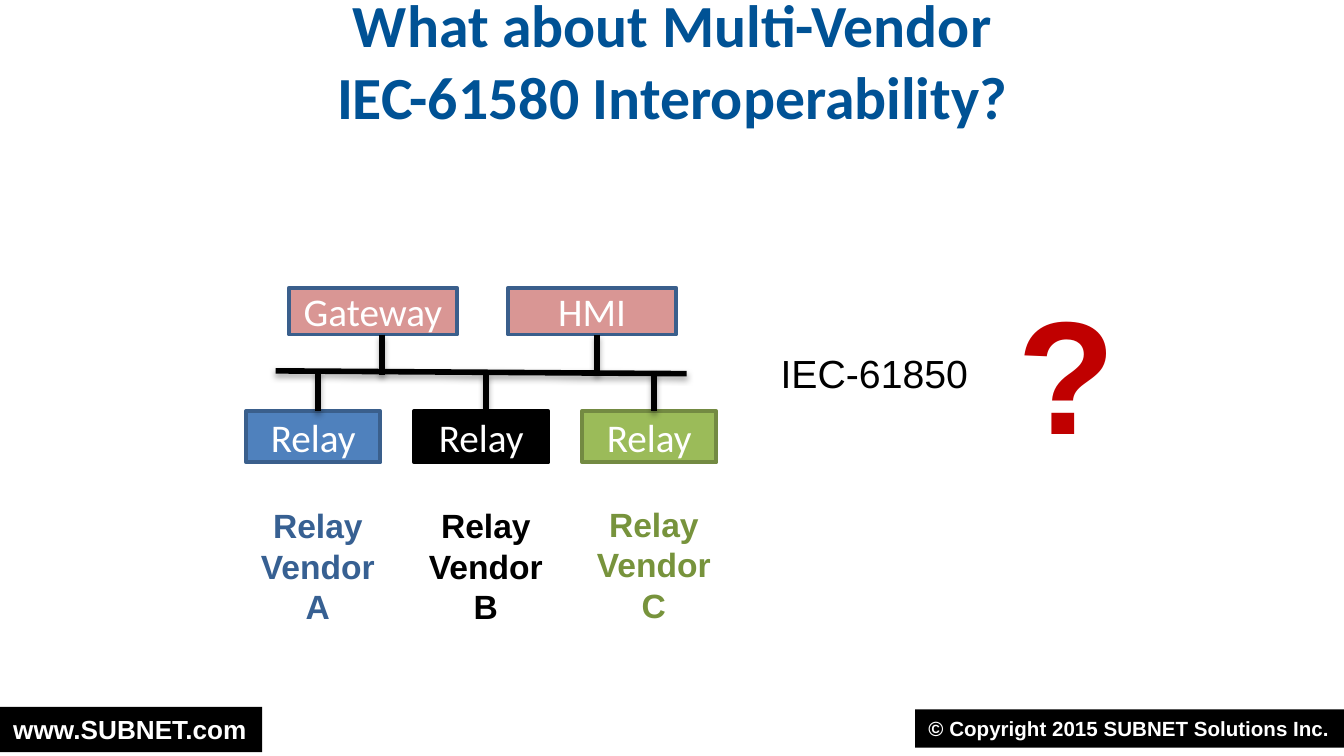
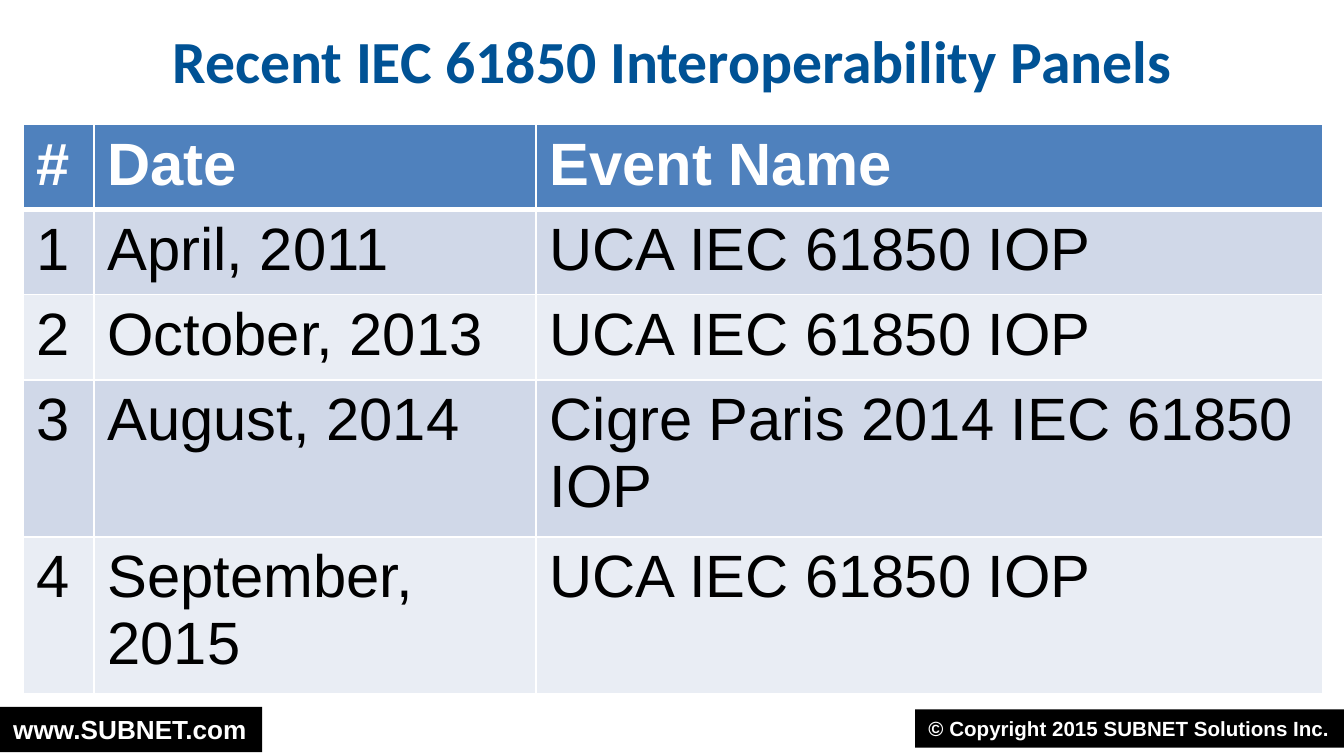
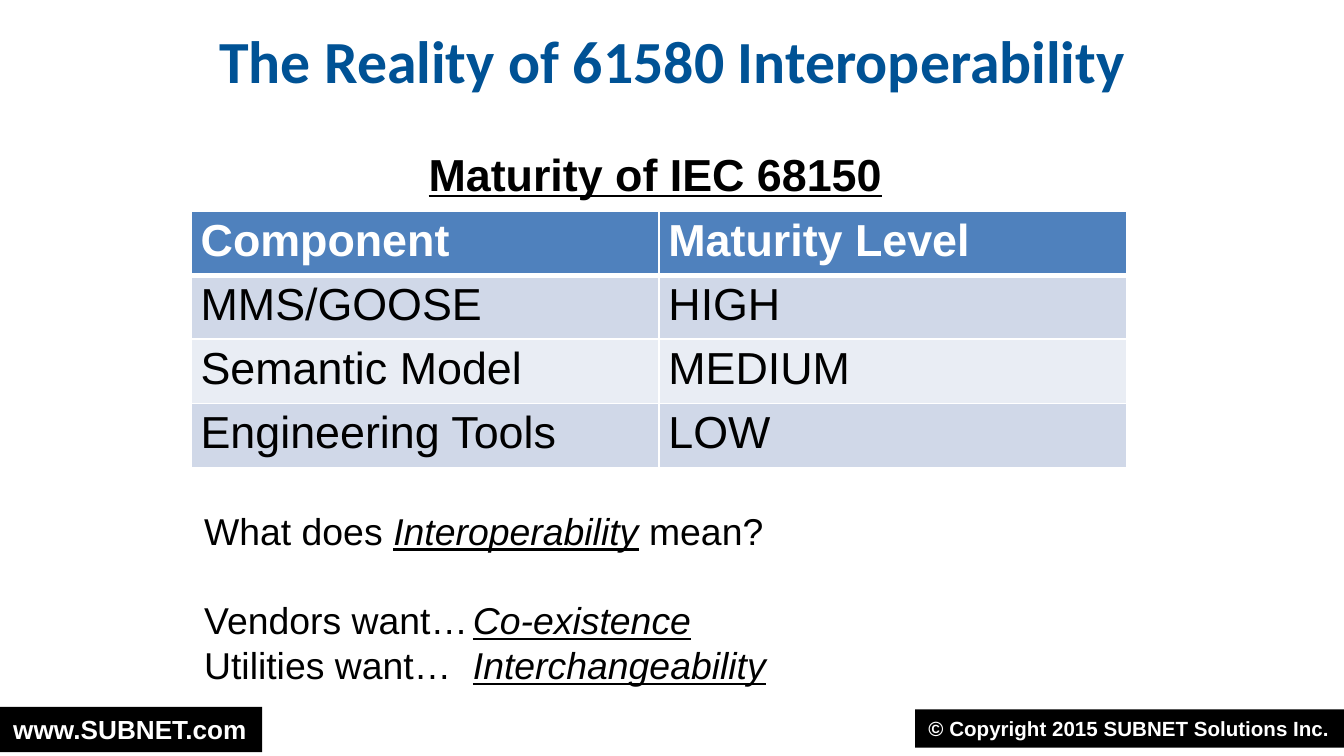
from dataclasses import dataclass
from typing import Any, NamedTuple

from lxml.etree import SubElement
from pptx import Presentation
from pptx.dml.color import RGBColor
from pptx.enum.shapes import MSO_CONNECTOR as Connector, MSO_SHAPE as Preset
from pptx.enum.text import MSO_ANCHOR as Anchor, MSO_AUTO_SIZE as AutoSize, PP_ALIGN as Align
from pptx.oxml.ns import qn
from pptx.util import Pt

WHITE, BLACK = "FFFFFF", "000000"
TITLE_BLUE, HEADER_BLUE, BOX_BLUE = "005295", "4F81BD", "3A5F8C"
ROW_FILLS = ("D0D8E8", "E9EDF4")

TITLE_FORMAT = {"name": "Calibri", "size": Pt(32), "bold": True}
BOX_FORMAT = {"name": "Calibri", "size": Pt(21)}
EMPHASIS = {"italic": True, "underline": True}


def arial(size: float, **extra: Any) -> dict[str, Any]:
    return {"name": "Arial", "size": Pt(size), **extra}


class Area(NamedTuple):
    left: float
    top: float
    width: float
    height: float

    def lengths(self) -> list[Pt]:
        return [Pt(value) for value in self]


class Piece(NamedTuple):
    text: str
    emphasised: bool = False


@dataclass
class Footer:
    text: str
    area: Area
    size: float


@dataclass
class Station:
    text: str
    left: float
    drop_x: float


@dataclass
class Relay:
    vendor: str
    fill: str
    outline: str
    label_color: str
    drop_top: float
    label_top: float


@dataclass
class Grid:
    area: Area
    widths: list[float]
    rows: list[tuple[str, ...]]
    size: float
    insets: tuple[float, float]


FOOTERS = [
    Footer("www.SUBNET.com", Area(0, 378.7, 140.4, 24.3), 14),
    Footer("© Copyright 2015 SUBNET Solutions Inc.", Area(490.3, 380, 229.7, 20.6), 11),
]
STATIONS = [Station("Gateway", 154.8, 204.5), Station("HMI", 272.2, 319.7)]
RELAYS = [
    Relay("A", "4F81BD", BOX_BLUE, "376092", 198.7, 267.1),
    Relay("B", BLACK, BLACK, BLACK, 200.2, 267.1),
    Relay("C", "9BBB59", "738A42", "77933C", 198.7, 266.4),
]
RELAY_LEFT, RELAY_TOP, RELAY_PITCH = 131.8, 220.3, 90
STATION_TOP, STATION_HEIGHT = 154.1, 25.2
LABEL_WIDTH = 77

EVENTS = Grid(
    Area(12.2, 66.6, 696.3, 147.5),
    [38.2, 236.9, 421.2],
    [
        ("#", "Date", "Event Name"),
        ("1", "April, 2011", "UCA IEC 61850 IOP"),
        ("2", "October, 2013", "UCA IEC 61850 IOP"),
        ("3", "August, 2014", "Cigre Paris 2014 IEC 61850 IOP"),
        ("4", "September, 2015", "UCA IEC 61850 IOP"),
    ],
    32,
    (7.2, 3.6),
)
MATURITY = Grid(
    Area(102.3, 113, 501.2, 137.6),
    [250.6, 250.6],
    [
        ("Component", "Maturity Level"),
        ("MMS/GOOSE", "HIGH"),
        ("Semantic Model", "MEDIUM"),
        ("Engineering Tools", "LOW"),
    ],
    24,
    (5.2, 2.6),
)
MEANING = [
    [Piece("What does "), Piece("Interoperability", True), Piece(" mean?")],
    [Piece("Vendors want…\t"), Piece("Co-existence", True)],
    [Piece("Utilities want…\t"), Piece("Interchangeability", True)],
]


def paint(target: Any, color: str) -> None:
    target.rgb = RGBColor.from_string(color)


def style_font(font: Any, values: dict[str, Any], color: str) -> None:
    for name, value in values.items():
        setattr(font, name, value)
    paint(font.color, color)


def write(frame: Any, lines: list[list[Piece]], values: dict[str, Any], color: str,
          align: Align = Align.LEFT) -> None:
    for index, pieces in enumerate(lines):
        paragraph = frame.add_paragraph() if index else frame.paragraphs[0]
        paragraph.alignment = align
        for piece in pieces:
            run = paragraph.add_run()
            run.text = piece.text
            style_font(run.font, values | (EMPHASIS if piece.emphasised else {}), color)


def add_text(slide: Any, area: Area, lines: list[list[Piece]], values: dict[str, Any],
             color: str = BLACK, align: Align = Align.LEFT, wrap: bool = True) -> Any:
    frame = slide.shapes.add_textbox(*area.lengths()).text_frame
    frame.word_wrap = wrap
    frame.auto_size = AutoSize.SHAPE_TO_FIT_TEXT
    write(frame, lines, values, color, align)
    return frame


def add_box(slide: Any, area: Area, text: str, values: dict[str, Any], fill: str,
            outline: str | None = None, align: Align = Align.CENTER) -> Any:
    shape = slide.shapes.add_shape(Preset.RECTANGLE, *area.lengths())
    shape.shadow.inherit = False
    shape.fill.solid()
    paint(shape.fill.fore_color, fill)
    if outline:
        shape.line.width = Pt(2)
        paint(shape.line.color, outline)
    else:
        shape.line.fill.background()
    shape.text_frame.vertical_anchor = Anchor.MIDDLE
    write(shape.text_frame, [[Piece(text)]], values, WHITE, align)
    return shape


def add_wire(slide: Any, x1: float, y1: float, x2: float, y2: float) -> None:
    wire = slide.shapes.add_connector(Connector.STRAIGHT, Pt(x1), Pt(y1), Pt(x2), Pt(y2))
    wire.line.width = Pt(3)
    paint(wire.line.color, BLACK)
    effects = SubElement(wire.element.spPr, qn("a:effectLst"))
    shadow = SubElement(effects, qn("a:outerShdw"), blurRad="40000", dist="23000",
                        dir="5400000", rotWithShape="0")
    color = SubElement(shadow, qn("a:srgbClr"), val=BLACK)
    SubElement(color, qn("a:alpha"), val="35000")


def add_footer(slide: Any, footer: Footer) -> None:
    values = arial(footer.size, bold=True)
    shape = add_box(slide, footer.area, footer.text, values, BLACK, align=Align.LEFT)
    frame = shape.text_frame
    frame.vertical_anchor = Anchor.TOP
    frame.word_wrap = False
    frame.auto_size = AutoSize.SHAPE_TO_FIT_TEXT


def add_slide(presentation: Any, title: str) -> Any:
    slide = presentation.slides.add_slide(presentation.slide_layouts[5])
    placeholder = slide.shapes.title
    area = Area(12.2, 10.8, 696.2, 42.5)
    for name, length in zip(Area._fields, area.lengths()):
        setattr(placeholder, name, length)
    frame = placeholder.text_frame
    frame.word_wrap = True
    frame.auto_size = AutoSize.NONE
    frame.vertical_anchor = Anchor.MIDDLE
    frame.text = title
    paragraph = frame.paragraphs[0]
    paragraph.alignment = Align.CENTER
    for run in paragraph.runs:
        style_font(run.font, TITLE_FORMAT, TITLE_BLUE)
    for line_break in frame.paragraphs[0]._p.findall(qn("a:br")):
        SubElement(line_break, qn("a:rPr"), sz="3200")
    for footer in FOOTERS:
        add_footer(slide, footer)
    return slide


def add_borders(cell: Any, widths: dict[str, float]) -> None:
    properties = cell._tc.get_or_add_tcPr()
    for index, (side, width) in enumerate(widths.items()):
        line = SubElement(properties, qn(f"a:ln{side}"), w=str(Pt(width)))
        fill = SubElement(line, qn("a:solidFill"))
        SubElement(fill, qn("a:srgbClr"), val=WHITE)
        properties.insert(index, line)


def add_grid(slide: Any, grid: Grid) -> None:
    shape = slide.shapes.add_table(len(grid.rows), len(grid.widths), *grid.area.lengths())
    table = shape.table
    for column, width in zip(table.columns, grid.widths):
        column.width = Pt(width)
    horizontal, vertical = (Pt(inset) for inset in grid.insets)
    margins = {"margin_left": horizontal, "margin_right": horizontal,
               "margin_top": vertical, "margin_bottom": vertical}
    for row, texts in enumerate(grid.rows):
        header = row == 0
        fill = HEADER_BLUE if header else ROW_FILLS[(row - 1) % 2]
        borders = {"L": 1, "R": 1, "T": 1, "B": 3} if header else {"L": 1, "R": 1, "B": 1}
        for column, text in enumerate(texts):
            cell = table.cell(row, column)
            for name, value in margins.items():
                setattr(cell, name, value)
            cell.fill.solid()
            paint(cell.fill.fore_color, fill)
            add_borders(cell, borders)
            write(cell.text_frame, [[Piece(text)]], arial(grid.size, bold=header),
                  WHITE if header else BLACK)


def build_network(presentation: Any) -> None:
    slide = add_slide(presentation, "What about Multi-Vendor\vIEC-61580 Interoperability?")
    add_text(slide, Area(537.8, 143.3, 67.7, 111.6), [[Piece("?")]],
             arial(86.2, bold=True), "C00000")
    add_text(slide, Area(411.1, 183.6, 121.7, 32.4), [[Piece("IEC-61850")]], arial(21))
    add_wire(slide, 367.9, 200.2, 147.6, 198.7)
    for station in STATIONS:
        add_box(slide, Area(station.left, STATION_TOP, 90, STATION_HEIGHT), station.text,
                BOX_FORMAT, "D99694", BOX_BLUE)
        add_wire(slide, station.drop_x, STATION_TOP + STATION_HEIGHT, station.drop_x, 200.9)
    for index, relay in enumerate(RELAYS):
        left = RELAY_LEFT + index * RELAY_PITCH
        drop_x = left + LABEL_WIDTH / 2
        add_box(slide, Area(left, RELAY_TOP, 72, 27.4), "Relay", BOX_FORMAT,
                relay.fill, relay.outline)
        add_wire(slide, drop_x, relay.drop_top, drop_x, RELAY_TOP)
        lines = [[Piece(text)] for text in ("Relay", "Vendor", relay.vendor)]
        add_text(slide, Area(left, relay.label_top, LABEL_WIDTH, 72.7), lines,
                 arial(18, bold=True), relay.label_color, Align.CENTER, wrap=False)


def build_events(presentation: Any) -> None:
    slide = add_slide(presentation, "Recent IEC 61850 Interoperability Panels")
    add_grid(slide, EVENTS)


def build_reality(presentation: Any) -> None:
    slide = add_slide(presentation, "The Reality of 61580 Interoperability")
    add_text(slide, Area(222.5, 74.9, 259.9, 36), [[Piece("Maturity of IEC 68150")]],
             arial(24, bold=True, underline=True), wrap=False)
    add_grid(slide, MATURITY)
    frame = add_text(slide, Area(102.3, 268.6, 453.6, 104.4), MEANING, arial(20))
    wants = frame.paragraphs[1:]
    for paragraph in wants:
        tabs = SubElement(paragraph._p.get_or_add_pPr(), qn("a:tabLst"))
        SubElement(tabs, qn("a:tab"), pos=str(Pt(144)), algn="l")
    wants[0].space_before = Pt(24)


def main() -> None:
    presentation = Presentation()
    presentation.slide_width, presentation.slide_height = Pt(720), Pt(405)
    build_network(presentation)
    build_events(presentation)
    build_reality(presentation)
    presentation.save("out.pptx")


if __name__ == "__main__":
    main()
